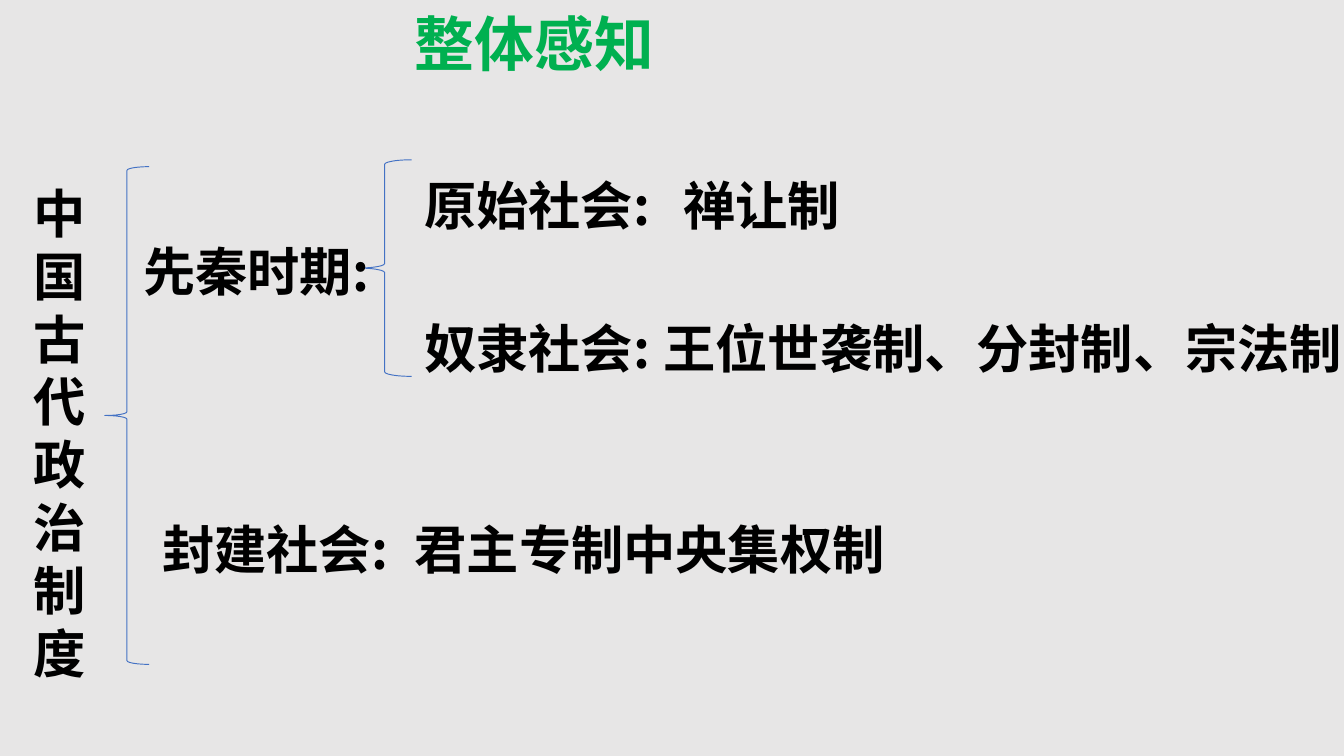
from dataclasses import dataclass

from lxml.etree import SubElement
from pptx import Presentation
from pptx.dml.color import RGBColor
from pptx.enum.shapes import MSO_SHAPE
from pptx.oxml.ns import qn
from pptx.util import Cm, Pt


@dataclass(frozen=True)
class Theme:
    font: str = "Noto Sans CJK SC"
    back: RGBColor = RGBColor(0xE7, 0xE6, 0xE6)
    ink: RGBColor = RGBColor(0, 0, 0)
    green: RGBColor = RGBColor(0x00, 0xB0, 0x50)
    blue: RGBColor = RGBColor(0x44, 0x72, 0xC4)
    head: Pt = Pt(32)
    body: Pt = Pt(28)
    line: Pt = Pt(0.5)


theme = Theme()
deck = Presentation()
deck.slide_width, deck.slide_height = Cm(25.4), Cm(14.28)
slide = deck.slides.add_slide(deck.slide_layouts[6])
slide.background.fill.solid()
slide.background.fill.fore_color.rgb = theme.back


def add_text(text, left, top, width=8.03, height=1.45, size=theme.body, color=theme.ink):
    box = slide.shapes.add_textbox(Cm(left), Cm(top), Cm(width), Cm(height))
    box.text_frame.word_wrap = True
    run = box.text_frame.paragraphs[0].add_run()
    run.text = text
    font = run.font
    font.name, font.size, font.bold = theme.font, size, True
    font.color.rgb = color
    # Chinese characters take their typeface from the East Asian slot
    SubElement(run._r.get_or_add_rPr(), qn("a:ea"), typeface=theme.font)


add_text("整体感知", 7.59, 0, 7.85, 1.63, size=theme.head, color=theme.green)
add_text("中国古代政治制度", 0.38, 3.3, 1.6, 9.83)

# Left brace of the whole tree, then of the first era
for left, top, width, height in ((1.98, 3.15, 0.84, 9.4), (6.76, 3.02, 1.02, 4.09)):
    brace = slide.shapes.add_shape(
        MSO_SHAPE.LEFT_BRACE, Cm(left), Cm(top), Cm(width), Cm(height))
    brace.shadow.inherit = False
    brace.fill.background()
    brace.line.color.rgb = theme.blue
    brace.line.width = theme.line

add_text("先秦时期:", 2.46, 4.39)

# Each society and its system share a row
rows = (
    (3.15, 7.77, "原始社会:", 12.67, "禅让制"),
    (5.84, 7.77, "奴隶社会:", 12.29, "王位世袭制、分封制、宗法制"),
    (9.65, 2.82, "封建社会:", 7.59, "君主专制中央集权制"),
)
for top, left, label, start, system in rows:
    add_text(label, left, top)
    add_text(system, start, top, 13.59)

deck.save("out.pptx")
